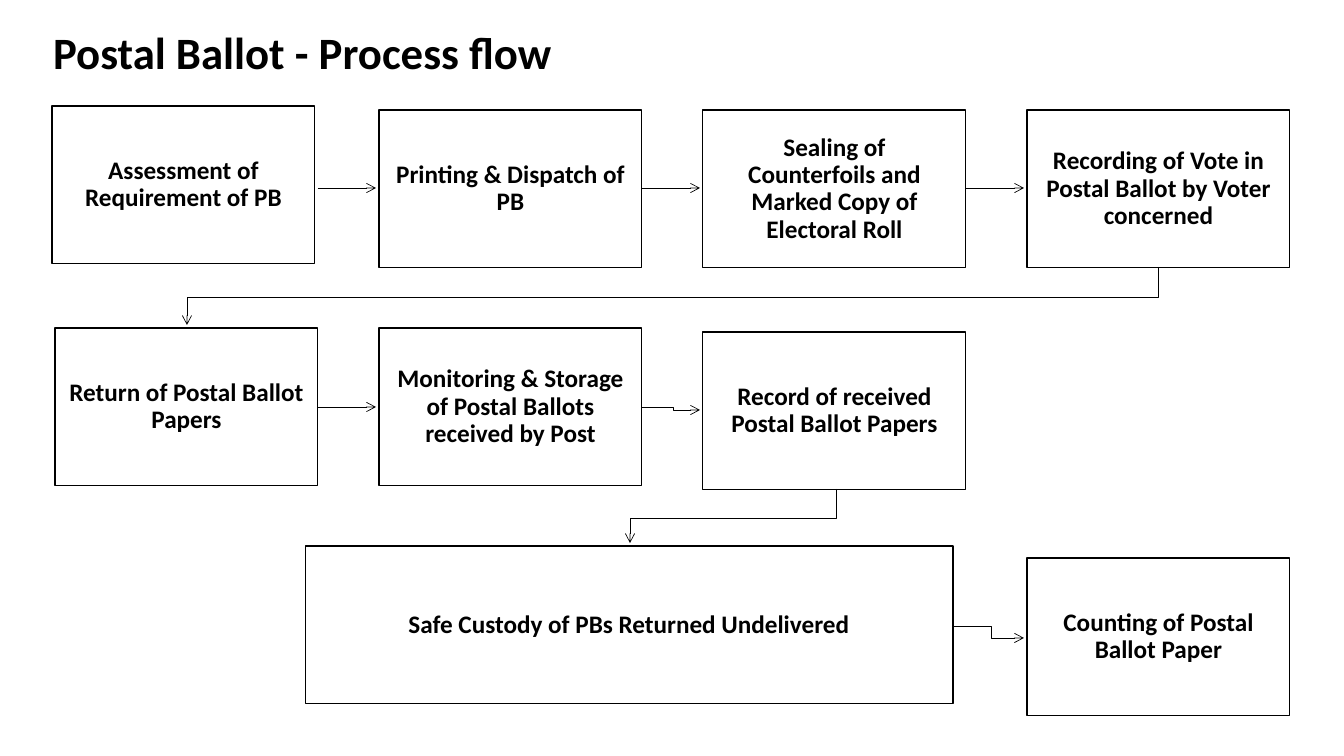
import lxml.etree
import pptx
import pptx.dml.color
import pptx.enum.shapes
import pptx.enum.text
import pptx.oxml.ns
import pptx.util

BLACK = pptx.dml.color.RGBColor(0x00, 0x00, 0x00)
EMU_PER_PX = 914400 / 100.8
SLIDE_SIZE = (1344, 756)
TITLE_ONLY = 5

FIRST_COLUMN, COLUMN_STEP = 55, 324
FIRST_ROW, ROW_STEP = 110, 218
STEP_WIDTH, STEP_HEIGHT = 263, 158

# column, row, text, shift right, shift down
STEPS = [
    (0, 0, "Assessment of Requirement of PB", -3, -4),
    (1, 0, "Printing & Dispatch of PB", 0, 0),
    (2, 0, "Sealing of Counterfoils and Marked Copy of Electoral Roll", 0, 0),
    (3, 0, "Recording of Vote in Postal Ballot by Voter concerned", 0, 0),
    (0, 1, "Return of Postal Ballot Papers", 0, 0),
    (1, 1, "Monitoring & Storage of Postal Ballots received by Post", 0, 0),
    (2, 1, "Record of received Postal Ballot Papers", 0, 4),
    (3, 2, "Counting of Postal Ballot Paper", 0, 12),
]
CUSTODY = (305, 546, 648, STEP_HEIGHT)

ROUTES = [
    [(318, 188), (376, 188)],
    [(642, 188), (700, 188)],
    [(966, 188), (1024, 188)],
    [(1158, 267), (1158, 297), (187, 297), (187, 325)],
    [(318, 407), (376, 407)],
    [(642, 407), (673, 407), (673, 410), (700, 410)],
    [(836, 489), (836, 518), (630, 518), (630, 543)],
    [(954, 626), (991, 626), (991, 638), (1024, 638)],
]


def emu(px):
    return pptx.util.Emu(round(px * EMU_PER_PX))


class FlowSlide:
    font = "Calibri"
    title_size = 32
    step_size = 18
    step_line = 0.75
    arrow_line = 0.5
    inset = 14

    def __init__(self, deck):
        self.slide = deck.slides.add_slide(deck.slide_layouts[TITLE_ONLY])
        self.shapes = self.slide.shapes

    def set_text(self, frame, text, size, align):
        frame.text = text
        paragraph = frame.paragraphs[0]
        paragraph.alignment = align
        font = paragraph.runs[0].font
        font.name, font.size, font.bold = self.font, pptx.util.Pt(size), True
        font.color.rgb = BLACK
        return paragraph

    def outline(self, shape, width):
        shape.line.color.rgb = BLACK
        shape.line.width = pptx.util.Pt(width)

    def title(self, text, left, top, width, height):
        heading = self.shapes.title
        heading.left, heading.top = emu(left), emu(top)
        heading.width, heading.height = emu(width), emu(height)
        frame = heading.text_frame
        frame.word_wrap = False
        frame.auto_size = pptx.enum.text.MSO_AUTO_SIZE.NONE
        frame.vertical_anchor = pptx.enum.text.MSO_ANCHOR.TOP
        self.set_text(frame, text, self.title_size,
                      pptx.enum.text.PP_ALIGN.LEFT)

    def step(self, text, left, top, width=STEP_WIDTH, height=STEP_HEIGHT):
        box = self.shapes.add_shape(
            pptx.enum.shapes.MSO_SHAPE.RECTANGLE,
            emu(left), emu(top), emu(width), emu(height))
        box.shadow.inherit = False
        box.fill.background()
        self.outline(box, self.step_line)
        frame = box.text_frame
        frame.word_wrap = True
        frame.vertical_anchor = pptx.enum.text.MSO_ANCHOR.MIDDLE
        frame.margin_left = frame.margin_right = emu(self.inset)
        frame.margin_top = frame.margin_bottom = emu(self.inset)
        paragraph = self.set_text(frame, text, self.step_size,
                                  pptx.enum.text.PP_ALIGN.CENTER)
        paragraph.line_spacing = 0.9

    def arrow(self, points):
        """Draw a straight connector, or an open outline if the route bends."""
        if len(points) == 2:
            (x1, y1), (x2, y2) = points
            route = self.shapes.add_connector(
                pptx.enum.shapes.MSO_CONNECTOR.STRAIGHT,
                emu(x1), emu(y1), emu(x2), emu(y2))
            lxml.etree.SubElement(route.element.spPr,
                                  pptx.oxml.ns.qn("a:effectLst"))
        else:
            builder = self.shapes.build_freeform(*points[0], scale=EMU_PER_PX)
            builder.add_line_segments(points[1:], close=False)
            route = builder.convert_to_shape()
            route.shadow.inherit = False
            route.fill.background()
        self.outline(route, self.arrow_line)
        line = route.element.spPr.find(pptx.oxml.ns.qn("a:ln"))
        lxml.etree.SubElement(line, pptx.oxml.ns.qn("a:tailEnd"), type="arrow")


def main():
    deck = pptx.Presentation()
    deck.slide_width, deck.slide_height = map(emu, SLIDE_SIZE)
    flow = FlowSlide(deck)
    flow.title("Postal Ballot - Process flow", 43, 20, 524, 65)
    for route in ROUTES:
        flow.arrow(route)
    for column, row, text, right, down in STEPS:
        flow.step(text, FIRST_COLUMN + column * COLUMN_STEP + right,
                  FIRST_ROW + row * ROW_STEP + down)
    flow.step("Safe Custody of PBs Returned Undelivered", *CUSTODY)
    deck.save("out.pptx")


if __name__ == "__main__":
    main()
